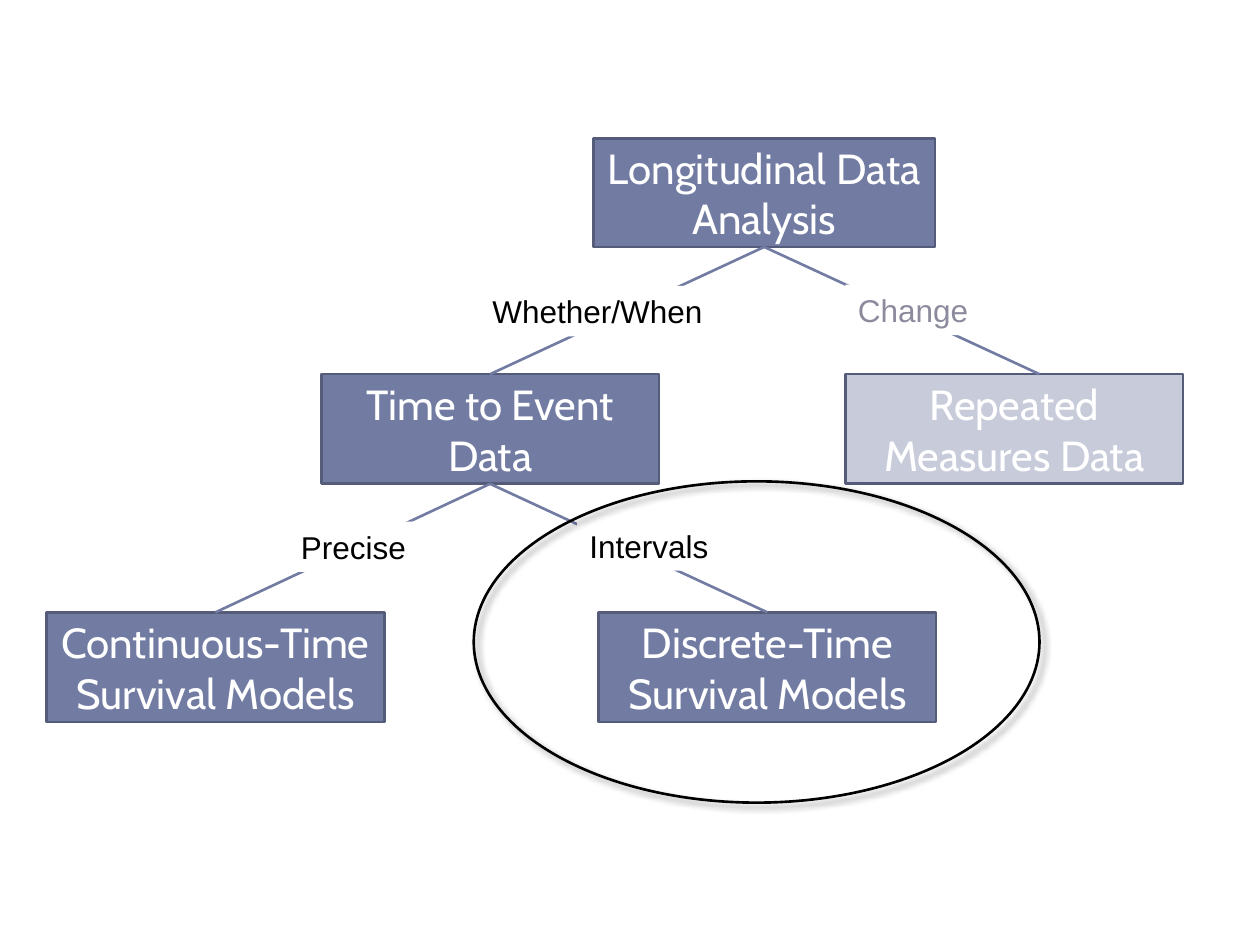
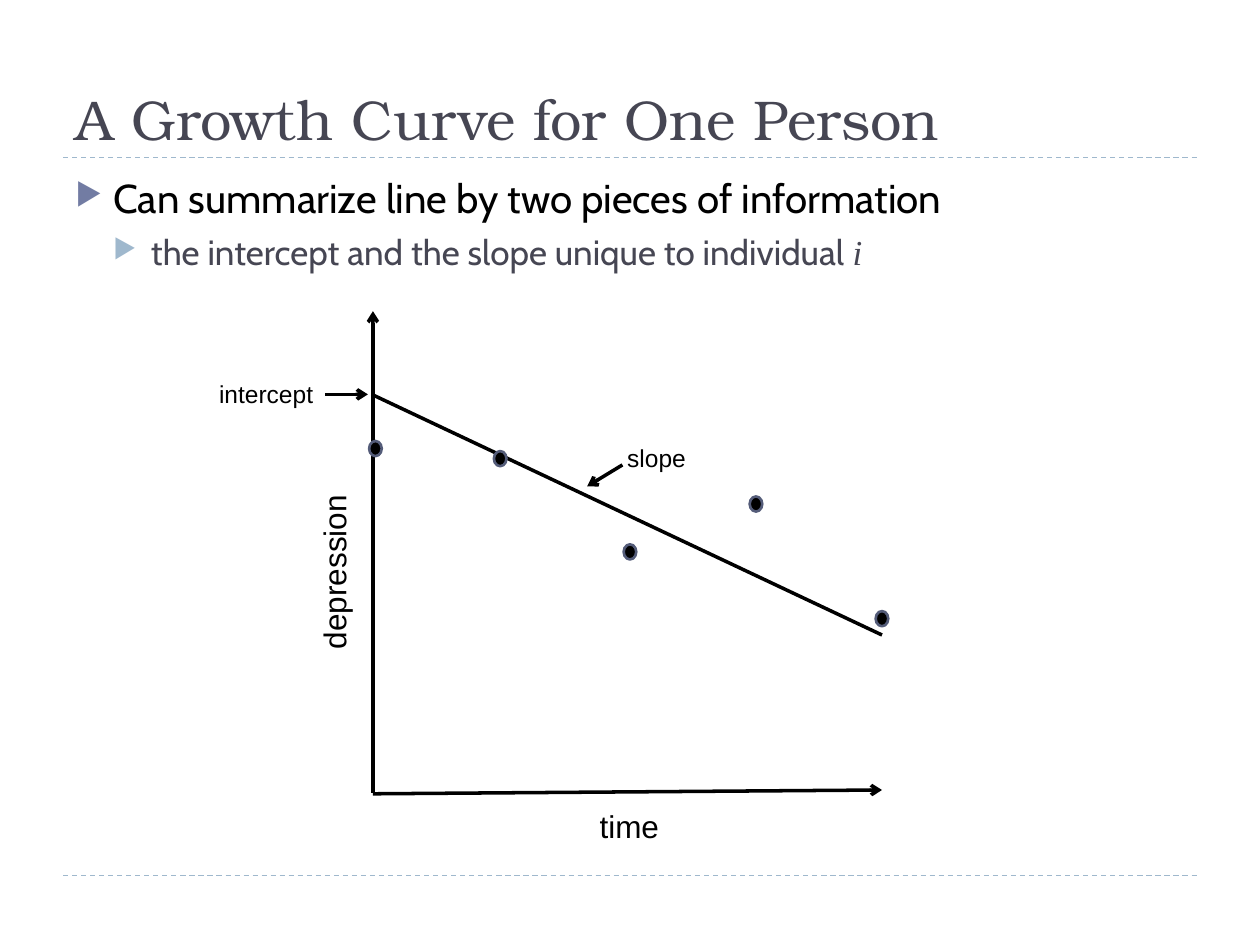
"""Build two slides: a tree of longitudinal methods and a growth curve."""
from dataclasses import dataclass

from lxml import etree
from pptx import Presentation
from pptx.dml.color import RGBColor
from pptx.enum.dml import MSO_LINE
from pptx.enum.shapes import MSO_CONNECTOR, MSO_SHAPE
from pptx.enum.text import MSO_ANCHOR, MSO_AUTO_SIZE, PP_ALIGN
from pptx.oxml.ns import qn
from pptx.util import Emu, Pt

RECT, OVAL = MSO_SHAPE.RECTANGLE, MSO_SHAPE.OVAL
STRAIGHT, DASH = MSO_CONNECTOR.STRAIGHT, MSO_LINE.DASH
LEFT, CENTER = PP_ALIGN.LEFT, PP_ALIGN.CENTER
TOP, MIDDLE, BOTTOM = MSO_ANCHOR.TOP, MSO_ANCHOR.MIDDLE, MSO_ANCHOR.BOTTOM
GROW = MSO_AUTO_SIZE.SHAPE_TO_FIT_TEXT
TOP_SITE, BOTTOM_SITE = 0, 2

EMU_PER_PX = 9144
SLIDE_W, SLIDE_H = 1000, 750
MARGIN, CONTENT_W = 50, 900
RULE_YS = (695, 125)

BODY_FONT, TITLE_FONT, LABEL_FONT, MATH_FONT = (
    "Cabin", "TeX Gyre Bonum", "Arial", "Times New Roman")
BLACK, WHITE = "000000", "FFFFFF"
ACCENT, EDGE, PALE, MUTED = "727CA3", "545C79", "C7CBDA", "8B8B9D"
DARK, SKY = "464653", "9FB8CD"


@dataclass(frozen=True)
class Node:
    """A box of the tree."""
    text: str
    x: int
    y: int
    w: int = 268
    h: int = 87
    fill: str = ACCENT


@dataclass(frozen=True)
class Branch:
    """A line from a parent box down to a child box."""
    parent: str
    child: str
    end: tuple[int, int]
    joined: bool = True


@dataclass(frozen=True)
class Label:
    """A short piece of text beside a line or an axis."""
    text: str
    x: int
    y: int
    w: int
    h: int = 40
    size: int = 18
    color: str = BLACK
    fill: str | None = None
    wrap: bool = False
    align: PP_ALIGN = LEFT
    rotation: int = 0


@dataclass(frozen=True)
class Stroke:
    """A line of the graph, with or without an arrowhead."""
    start: tuple[int, int]
    end: tuple[int, int]
    arrow: bool = True


@dataclass(frozen=True)
class Bullet:
    """A bulleted paragraph with an optional italic symbol at its end."""
    text: str
    level: int
    size: int
    color: str
    marker: str
    before: int
    symbol: str = ""


NODES = {
    "root": Node("Longitudinal Data Analysis", 471, 110, 271, 86),
    "event": Node("Time to Event Data", 255, 297),
    "repeated": Node("Repeated Measures Data", 671, 297, fill=PALE),
    "continuous": Node("Continuous-Time Survival Models", 37, 486),
    "discrete": Node("Discrete-Time Survival Models", 475, 486),
}
BRANCHES = (
    Branch("root", "event", (389, 297)),
    Branch("root", "repeated", (825, 297), joined=False),
    Branch("event", "continuous", (171, 486)),
    Branch("event", "discrete", (609, 486)),
)
BRANCH_LABELS = (
    Label("Whether/When", 381, 227, 188, fill=WHITE),
    Label("Change", 671, 226, 109, color=MUTED, fill=WHITE),
    Label("Precise", 197, 414, 167, fill=WHITE, wrap=True, align=CENTER),
    Label("Intervals", 458, 413, 116, fill=WHITE),
)
BULLETS = (
    Bullet("Can summarize line by two pieces of information",
           0, 23, BLACK, ACCENT, 6),
    Bullet("the intercept and the slope unique to individual ",
           1, 20, DARK, SKY, 5, "i"),
)
STROKES = (
    Stroke((296, 630), (700, 627)),
    Stroke((296, 629), (296, 247)),
    Stroke((258, 313), (292, 313)),
    Stroke((494, 369), (466, 386)),
    Stroke((295, 313), (700, 504), arrow=False),
)
DOTS = ((293, 350), (392, 358), (495, 432), (595, 394), (695, 485))
GRAPH_LABELS = (
    Label("time", 466, 636, 68),
    Label("depression", 193, 433, 144, rotation=270),
    Label("intercept", 164, 296, 123, 34, 14, wrap=True),
    Label("slope", 488, 347, 123, 34, 14, wrap=True),
)


def px(*values: int) -> list[Emu]:
    """Turn px lengths into EMU."""
    return [Emu(v * EMU_PER_PX) for v in values]


def rgb(value: str) -> RGBColor:
    """Turn a hex string into a colour."""
    return RGBColor.from_string(value)


def sub(parent, tag: str, **attrs):
    """Append a DrawingML child element."""
    return etree.SubElement(parent, qn(tag), {k: str(v) for k, v in attrs.items()})


def add_text(p, text: str, *, size: int, font: str = BODY_FONT,
             color: str = BLACK, italic: bool = False) -> None:
    """Append a formatted run to a paragraph."""
    r = p.add_run()
    r.text = text
    r.font.size, r.font.name, r.font.italic = Pt(size), font, italic
    r.font.color.rgb = rgb(color)


def add_frame(s, x: int, y: int, w: int, h: int, anchor: MSO_ANCHOR = TOP,
              wrap: bool = True):
    """Add an empty text box."""
    sp = s.shapes.add_textbox(*px(x, y, w, h))
    sp.text_frame.word_wrap = wrap
    sp.text_frame.vertical_anchor = anchor
    return sp


def add_block(s, kind: MSO_SHAPE, x: int, y: int, w: int, h: int,
              fill: str | None, line: str):
    """Add a preset shape with a thin outline and no shadow."""
    sp = s.shapes.add_shape(kind, *px(x, y, w, h))
    sp.shadow.inherit = False
    if fill:
        sp.fill.solid()
        sp.fill.fore_color.rgb = rgb(fill)
    else:
        sp.fill.background()
    sp.line.color.rgb, sp.line.width = rgb(line), Pt(1.5)
    return sp


def add_line(s, start: tuple[int, int], end: tuple[int, int], color: str,
             width: float, dash: bool = False, arrow: bool = False):
    """Add a straight connector."""
    cx = s.shapes.add_connector(STRAIGHT, *px(*start, *end))
    cx.line.color.rgb, cx.line.width = rgb(color), Pt(width)
    if dash:
        cx.line.dash_style = DASH
    sp_pr = cx.element.spPr
    if arrow:
        sub(sp_pr.find(qn("a:ln")), "a:tailEnd", type="arrow")
    sub(sp_pr, "a:effectLst")
    return cx


def add_label(s, label: Label) -> None:
    """Add a label in its own text box."""
    sp = add_frame(s, label.x, label.y, label.w, label.h, wrap=label.wrap)
    sp.rotation = label.rotation
    sp.text_frame.auto_size = GROW
    if label.fill:
        sp.fill.solid()
        sp.fill.fore_color.rgb = rgb(label.fill)
    p = sp.text_frame.paragraphs[0]
    p.alignment = label.align
    add_text(p, label.text, size=label.size, font=LABEL_FONT, color=label.color)


def add_node(s, node: Node):
    """Add a tree box with centred text."""
    sp = add_block(s, RECT, node.x, node.y, node.w, node.h, node.fill, EDGE)
    tf = sp.text_frame
    tf.word_wrap, tf.vertical_anchor = True, MIDDLE
    p = tf.paragraphs[0]
    p.alignment = CENTER
    add_text(p, node.text, size=24, color=WHITE)
    return sp


def add_highlight(s) -> None:
    """Circle the discrete-time branch with a softly shadowed ellipse."""
    sp = add_block(s, OVAL, 376, 382, 449, 255, None, BLACK)
    effects = sp.element.spPr.find(qn("a:effectLst"))
    shadow = sub(effects, "a:outerShdw", blurRad=Pt(4), dist=Pt(3),
                 dir=45 * 60000, algn="tl", rotWithShape=0)
    sub(sub(shadow, "a:srgbClr", val=BLACK), "a:alpha", val=40000)


def add_title(s, text: str) -> None:
    """Add the title and the two dashed rules of a content slide."""
    for y in RULE_YS:
        add_line(s, (MARGIN, y), (MARGIN + CONTENT_W, y), SKY, 0.75, dash=True)
    sp = add_frame(s, MARGIN, 17, CONTENT_W, 108, BOTTOM)
    add_text(sp.text_frame.paragraphs[0], text, size=32, font=TITLE_FONT, color=DARK)


def add_bullets(s, bullets: tuple[Bullet, ...]) -> None:
    """Add the bulleted body text."""
    tf = add_frame(s, MARGIN, 133, CONTENT_W, 540).text_frame
    for i, b in enumerate(bullets):
        p = tf.add_paragraph() if i else tf.paragraphs[0]
        p.level, p.space_before = b.level, Pt(b.before)
        p_pr = p._p.get_or_add_pPr()
        indent, hang = px(30 * (b.level + 1), -30)
        p_pr.set("marL", str(indent))
        p_pr.set("indent", str(hang))
        sub(sub(p_pr, "a:buClr"), "a:srgbClr", val=b.marker)
        sub(p_pr, "a:buSzPct", val=76000)
        sub(p_pr, "a:buChar", char="▶")
        add_text(p, b.text, size=b.size, color=b.color)
        if b.symbol:
            add_text(p, b.symbol, size=b.size, font=MATH_FONT, color=b.color,
                     italic=True)


def build_tree(s) -> None:
    """Draw the tree of longitudinal methods."""
    boxes = {key: add_node(s, node) for key, node in NODES.items()}
    for b in BRANCHES:
        parent = NODES[b.parent]
        start = (parent.x + parent.w // 2, parent.y + parent.h)
        cx = add_line(s, start, b.end, ACCENT, 1.5)
        cx.begin_connect(boxes[b.parent], BOTTOM_SITE)
        if b.joined:
            cx.end_connect(boxes[b.child], TOP_SITE)
    for label in BRANCH_LABELS:
        add_label(s, label)
    add_highlight(s)


def build_growth_curve(s) -> None:
    """Draw the growth curve of one person."""
    add_title(s, "A Growth Curve for One Person")
    add_bullets(s, BULLETS)
    for stroke in STROKES:
        add_line(s, stroke.start, stroke.end, BLACK, 2, arrow=stroke.arrow)
    for x, y in DOTS:
        add_block(s, OVAL, x, y, 10, 12, BLACK, EDGE)
    for label in GRAPH_LABELS:
        add_label(s, label)


def main() -> None:
    """Build and save the presentation."""
    prs = Presentation()
    prs.slide_width, prs.slide_height = px(SLIDE_W, SLIDE_H)
    for build in (build_tree, build_growth_curve):
        build(prs.slides.add_slide(prs.slide_layouts[6]))
    prs.save("out.pptx")


if __name__ == "__main__":
    main()
